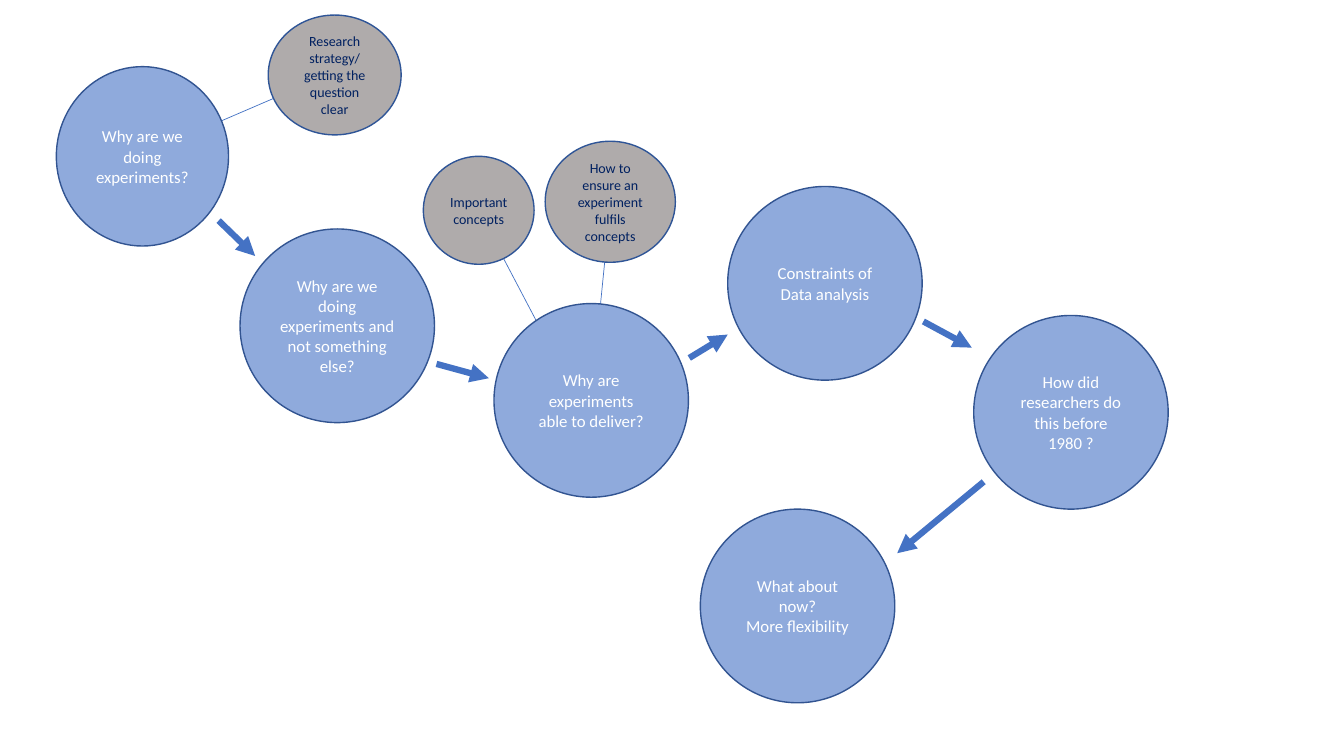
from dataclasses import dataclass

from pptx import Presentation
from pptx import util as u
from pptx.dml.color import RGBColor
from pptx.enum import shapes, text
from pptx.oxml.ns import qn
from lxml import etree


@dataclass(frozen=True)
class Theme:
    font: str = "Calibri"
    step_size: int = 12
    note_size: int = 10
    step_fill: str = "8FAADC"
    step_outline: str = "325491"
    step_text: str = "FFFFFF"
    note_fill: str = "AFABAB"
    note_outline: str = "2F5597"
    note_text: str = "002060"
    link: str = "4472C4"
    outline_width: float = 1
    link_width: float = 0.5
    arrow_width: float = 4.5


theme = Theme()

prs = Presentation()
prs.slide_width, prs.slide_height = u.Cm(33.87), u.Cm(19.05)
slide = prs.slides.add_slide(prs.slide_layouts[6])


def add_link(start, end, width, arrow=False):
    link = slide.shapes.add_connector(
        shapes.MSO_CONNECTOR.STRAIGHT, *[u.Cm(v) for v in (*start, *end)])
    link.line.color.rgb = RGBColor.from_string(theme.link)
    link.line.width = u.Pt(width)
    if arrow:
        etree.SubElement(link.line._get_or_add_ln(), qn("a:tailEnd"), type="triangle")
    etree.SubElement(link._element.spPr, qn("a:effectLst"))


def add_circle(words, box, fill, outline, color, size):
    circle = slide.shapes.add_shape(
        shapes.MSO_SHAPE.OVAL, *[u.Cm(v) for v in box])
    circle.shadow.inherit = False
    circle.fill.solid()
    circle.fill.fore_color.rgb = RGBColor.from_string(fill)
    circle.line.color.rgb = RGBColor.from_string(outline)
    circle.line.width = u.Pt(theme.outline_width)
    frame = circle.text_frame
    frame.word_wrap = True
    frame.vertical_anchor = text.MSO_ANCHOR.MIDDLE
    frame.text = words
    for paragraph in frame.paragraphs:
        paragraph.alignment = text.PP_ALIGN.CENTER
        for run in paragraph.runs:
            run.font.name = theme.font
            run.font.size = u.Pt(size)
            run.font.color.rgb = RGBColor.from_string(color)


# Thin links from notes to steps, behind the circles
note_links = [
    ((15.39, 5.08), (14.91, 9.91)),
    ((11.99, 5.18), (13.87, 8.76)),
    ((4.22, 3.63), (7.87, 2.06)),
]
for start, end in note_links:
    add_link(start, end, theme.link_width)

# Main steps
step_size = (4.9, 4.88)
steps = [
    ("Why are we doing experiments?", (1.42, 1.68, 4.34, 4.52)),
    ("Why are we doing experiments and not something else?", (6.05, 5.77, *step_size)),
    ("Why are experiments able to deliver?", (12.45, 7.65, *step_size)),
    ("Constraints of Data analysis", (18.34, 4.7, *step_size)),
    ("How did researchers do this before 1980 ?", (24.54, 7.95, *step_size)),
    ("What about now?\nMore flexibility", (17.65, 12.83, *step_size)),
]
for words, box in steps:
    add_circle(words, box, theme.step_fill, theme.step_outline,
               theme.step_text, theme.step_size)

# Side notes
notes = [
    ("Research strategy/\ngetting the question clear", (6.76, 0.38, 3.35, 3.02)),
    ("Important concepts", (10.67, 3.94, 2.79, 2.72)),
    ("How to ensure an experiment fulfils concepts", (13.74, 3.56, 3.28, 3.05)),
]
for words, box in notes:
    add_circle(words, box, theme.note_fill, theme.note_outline,
               theme.note_text, theme.note_size)

# Arrows from each step to the next
step_arrows = [
    ((5.51, 5.56), (6.43, 6.45)),
    ((11.0, 9.17), (12.32, 9.53)),
    ((17.37, 9.02), (18.34, 8.43)),
    ((23.27, 8.1), (24.49, 8.76)),
    ((24.79, 12.14), (22.61, 13.94)),
]
for start, end in step_arrows:
    add_link(start, end, theme.arrow_width, arrow=True)

prs.save("out.pptx")
